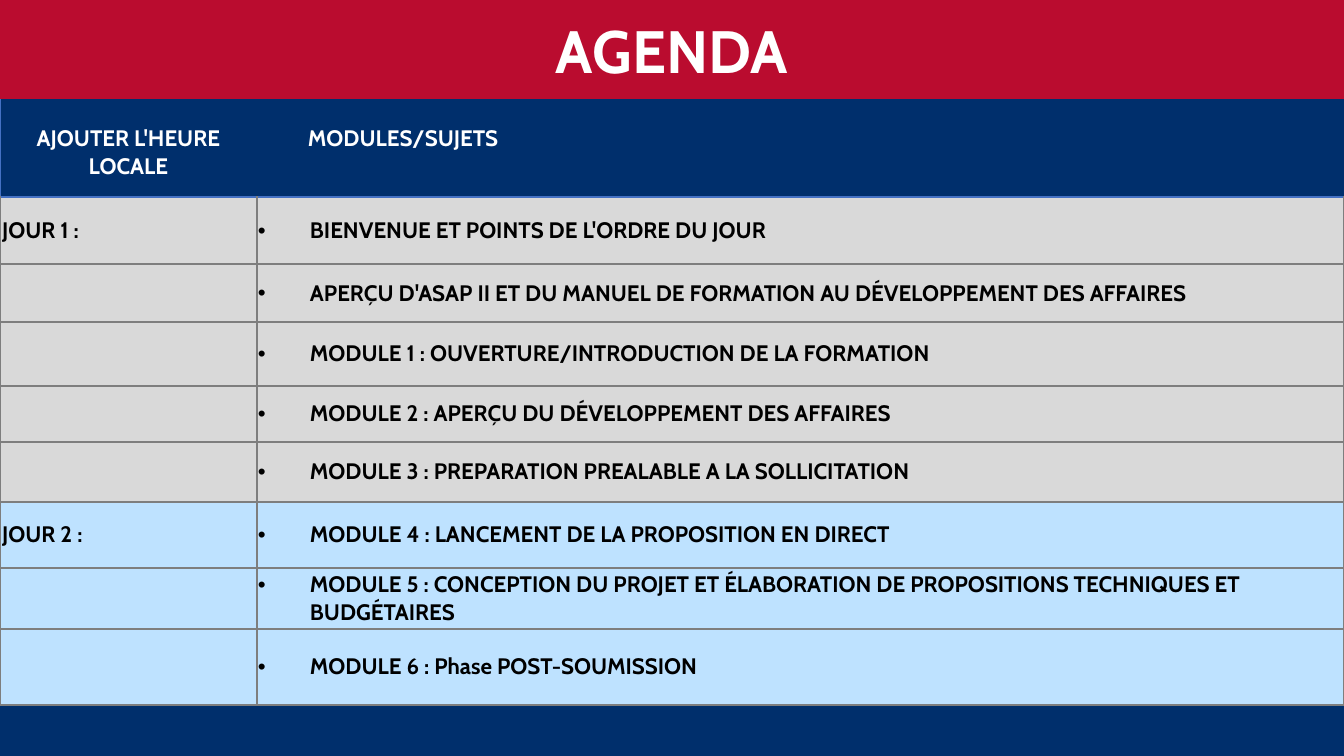
from lxml import etree
from pptx import Presentation, util as u
from pptx.dml.color import RGBColor
from pptx.enum import shapes, text
from pptx.oxml.ns import qn

PX = 914400 / 134.4
NAVY, RED, WHITE, BLACK = "002F6C", "BA0C2F", "FFFFFF", "000000"
GREY, SKY, RULE, BLUE = "D9D9D9", "BEE2FF", "7E7E7E", "4471C4"
NO_GRID = "{2D5ABB26-0587-4C30-8999-92F81FD0307C}"


def px(length):
    return u.Emu(round(length * PX))


def color(code):
    return RGBColor.from_string(code)


class Page:
    def __init__(self, slide, font):
        self.slide = slide
        self.font = font

    def add_span(self, para, words, size, code):
        span = para.add_run()
        span.text = words
        span.font.name = self.font
        span.font.size = u.Pt(size)
        span.font.bold = True
        span.font.color.rgb = color(code)

    def add_band(self, top, height, fill, title=""):
        band = self.slide.shapes.add_shape(
            shapes.MSO_SHAPE.RECTANGLE, 0, px(top), px(1344), px(height))
        band.shadow.inherit = False
        band.fill.solid()
        band.fill.fore_color.rgb = color(fill)
        band.line.fill.background()
        if title:
            frame = band.text_frame
            frame.word_wrap = True
            frame.vertical_anchor = text.MSO_ANCHOR.MIDDLE
            para = frame.paragraphs[0]
            para.alignment = text.PP_ALIGN.CENTER
            self.add_span(para, title, 32, WHITE)

    def add_table(self, top, widths, heights):
        frame = self.slide.shapes.add_table(
            len(heights), len(widths), 0, px(top), px(sum(widths)), px(sum(heights)))
        table = frame.table
        table.first_row = table.horz_banding = False
        table._tbl.tblPr.find(qn("a:tableStyleId")).text = NO_GRID
        for column, width in zip(table.columns, widths):
            column.width = px(width)
        for row, height in zip(table.rows, heights):
            row.height = px(height)
        return table

    def fill_cell(self, cell, words, fill, borders, code=BLACK, top=0,
                  indent=0, bullet=False, align=None):
        cell.margin_left = cell.margin_right = cell.margin_bottom = 0
        cell.margin_top = px(top)
        cell.vertical_anchor = text.MSO_ANCHOR.TOP if top else text.MSO_ANCHOR.MIDDLE
        cell.fill.solid()
        cell.fill.fore_color.rgb = color(fill)
        self.set_borders(cell, borders)
        para = cell.text_frame.paragraphs[0]
        para.alignment = align
        self.set_indent(para, indent, bullet)
        para.font.size = u.Pt(12)
        if words:
            self.add_span(para, words, 12, code)

    def set_indent(self, para, indent, bullet):
        props = para._p.get_or_add_pPr()
        props.set("marL", str(px(indent)))
        props.set("indent", str(px(1 - indent) if bullet else 0))
        if bullet:
            tint = etree.SubElement(props, qn("a:buClr"))
            etree.SubElement(tint, qn("a:srgbClr"), val=BLACK)
            etree.SubElement(props, qn("a:buFont"), typeface="Arial")
            etree.SubElement(props, qn("a:buChar"), char="•")

    def set_borders(self, cell, borders):
        props = cell._tc.get_or_add_tcPr()
        sides = [side for side in "LRTB" if side in borders]
        for place, side in enumerate(sides):
            line = etree.Element(qn(f"a:ln{side}"), w=str(u.Pt(1)))
            solid = etree.SubElement(line, qn("a:solidFill"))
            etree.SubElement(solid, qn("a:srgbClr"), val=borders[side])
            props.insert(place, line)


def main():
    deck = Presentation()
    deck.slide_width, deck.slide_height = px(1344), px(756)
    page = Page(deck.slides.add_slide(deck.slide_layouts[6]), "Cabin")

    page.add_band(705, 51, NAVY)

    agenda = [
        ("JOUR 1 :", GREY, [
            "BIENVENUE ET POINTS DE L'ORDRE DU JOUR",
            "APERÇU D'ASAP II ET DU MANUEL DE FORMATION AU DÉVELOPPEMENT DES AFFAIRES",
            "MODULE 1 : OUVERTURE/INTRODUCTION DE LA FORMATION",
            "MODULE 2 : APERÇU DU DÉVELOPPEMENT DES AFFAIRES",
            "MODULE 3 : PREPARATION PREALABLE A LA SOLLICITATION",
        ]),
        ("JOUR 2 :", SKY, [
            "MODULE 4 : LANCEMENT DE LA PROPOSITION EN DIRECT",
            "MODULE 5 : CONCEPTION DU PROJET ET ÉLABORATION DE PROPOSITIONS TECHNIQUES ET BUDGÉTAIRES",
            "MODULE 6 : Phase POST-SOUMISSION",
        ]),
    ]
    table = page.add_table(98, [257, 1087], [99, 67, 58, 64, 56, 60, 66, 61, 76])

    edges = {"T": BLUE, "B": BLUE}
    page.fill_cell(table.cell(0, 0), "AJOUTER L'HEURE LOCALE", NAVY, {"L": BLUE, **edges},
                   WHITE, top=27, align=text.PP_ALIGN.CENTER)
    page.fill_cell(table.cell(0, 1), "MODULES/SUJETS", NAVY, edges, WHITE, top=27, indent=51)

    row = 1
    for day, fill, topics in agenda:
        for place, topic in enumerate(topics):
            borders = dict.fromkeys("LRTB", RULE)
            if row == 1:
                borders["T"] = BLUE
            label = day if place == 0 else ""
            page.fill_cell(table.cell(row, 0), label, fill, borders, indent=2)
            page.fill_cell(table.cell(row, 1), topic, fill, borders, indent=53, bullet=True)
            row += 1

    page.add_band(0, 99, RED, "AGENDA")
    deck.save("out.pptx")


if __name__ == "__main__":
    main()
